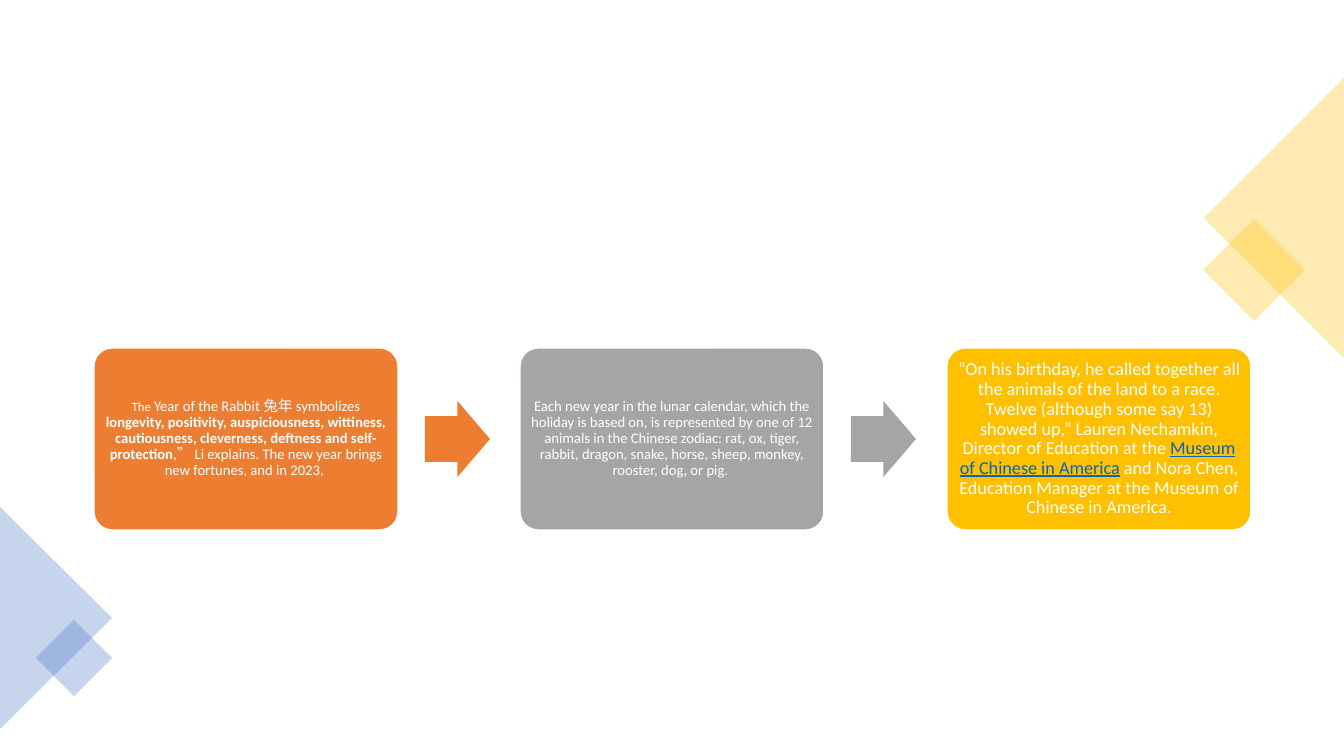
from dataclasses import dataclass

from pptx import Presentation
from pptx.dml.color import RGBColor
from pptx.enum.shapes import MSO_SHAPE
from pptx.enum.text import MSO_ANCHOR, PP_ALIGN
from pptx.oxml.ns import qn
from pptx.shapes.autoshape import Shape
from pptx.util import Emu, Pt
from lxml import etree

RECT = MSO_SHAPE.RECTANGLE
TRI = MSO_SHAPE.ISOSCELES_TRIANGLE
CARD = MSO_SHAPE.ROUNDED_RECTANGLE
ARROW = MSO_SHAPE.RIGHT_ARROW
MIDDLE = MSO_ANCHOR.MIDDLE
CENTER = PP_ALIGN.CENTER


@dataclass(frozen=True)
class Theme:
    font: str = "Calibri"
    white: str = "FFFFFF"
    orange: str = "ED7D31"
    gray: str = "A5A5A5"
    gold: str = "FFC000"
    blue: str = "4472C4"
    link: str = "0563C1"
    tiny: float = 9
    dot: float = 10
    small: float = 10.5
    large: float = 13


@dataclass(frozen=True)
class Box:
    x: int
    y: int
    w: int
    h: int


@dataclass(frozen=True)
class Decor:
    kind: MSO_SHAPE
    box: Box
    turn: int
    color: str


@dataclass(frozen=True)
class Run:
    text: str
    size: float
    color: str = Theme.white
    bold: bool = False
    under: bool = False


@dataclass(frozen=True)
class Step:
    color: str
    inset: int
    runs: tuple[Run, ...]


T = Theme()
SCALE = 914400 / 100.8  # EMU in one px
ALPHA = 30  # percent

# Corner decoration, back to front
DECOR = (
    Decor(RECT, Box(1218, 234, 72, 72), 45, T.gold),
    Decor(TRI, Box(1134, 148, 280, 140), 270, T.gold),
    Decor(TRI, Box(-55, 562, 222, 112), 90, T.blue),
    Decor(RECT, Box(47, 631, 54, 54), 45, T.blue),
)

# Story steps
STEPS = (
    Step(T.orange, 4, (
        Run("The", T.tiny),
        Run(" Year of the Rabbit 兔年 symbolizes ", T.small),
        Run("longevity, positivity, auspiciousness, wittiness, cautiousness, "
            "cleverness, deftness and self-protection", T.small, bold=True),
        Run(",” Li explains. The new year brings new fortunes, and in 2023, ",
            T.small),
    )),
    Step(T.gray, 5, (
        Run("Each new year in the lunar calendar, which the holiday is based "
            "on, is represented by one of 12 animals in the Chinese zodiac: "
            "rat, ox, tiger, rabbit, dragon, snake, horse, sheep, monkey, "
            "rooster, dog, or pig", T.small),
        Run(". ", T.dot),
    )),
    Step(T.gold, 5, (
        Run("“On his birthday, he called together all the animals of the land "
            "to a race. Twelve (although some say 13) showed up,” Lauren "
            "Nechamkin, Director of Education at the ", T.large),
        Run("Museum of Chinese in America", T.large, T.link, under=True),
        Run(" and Nora Chen, Education Manager at the Museum of Chinese in "
            "America.", T.large),
    )),
)


def px(n: int) -> Emu:
    return Emu(round(n * SCALE))


def draw(slide, kind: MSO_SHAPE, box: Box, color: str,
         adj: tuple[float, ...] = ()) -> Shape:
    """Add a filled shape with no outline or shadow."""
    shape = slide.shapes.add_shape(
        kind, px(box.x), px(box.y), px(box.w), px(box.h))
    shape.shadow.inherit = False
    shape.fill.solid()
    shape.fill.fore_color.rgb = RGBColor.from_string(color)
    shape.line.fill.background()
    for i, value in enumerate(adj):
        shape.adjustments[i] = value
    return shape


def fade(shape: Shape, share: int) -> None:
    """Make the fill see-through, share being its opacity in percent."""
    tint = shape.fill._xPr.find(qn("a:solidFill"))[0]
    etree.SubElement(tint, qn("a:alpha")).set("val", str(share * 1000))


def write(par, text: str, *, size: float, color: str,
          bold: bool, under: bool) -> None:
    run = par.add_run()
    run.text = text
    font = run.font
    font.name = T.font
    font.size = Pt(size)
    font.bold = bold
    font.underline = under
    font.color.rgb = RGBColor.from_string(color)


def card(slide, box: Box, step: Step) -> None:
    shape = draw(slide, CARD, box, step.color, (0.1,))
    shape.line.color.rgb = RGBColor.from_string(T.white)
    shape.line.width = Pt(1)
    frame = shape.text_frame
    frame.word_wrap = True
    frame.vertical_anchor = MIDDLE
    frame.margin_left = frame.margin_right = px(step.inset)
    frame.margin_top = frame.margin_bottom = px(step.inset)
    par = frame.paragraphs[0]
    par.alignment = CENTER
    par.line_spacing = 0.9
    for run in step.runs:
        write(par, run.text, size=run.size, color=run.color,
              bold=run.bold, under=run.under)


def main() -> None:
    deck = Presentation()
    deck.slide_width, deck.slide_height = px(1344), px(756)
    slide = deck.slides.add_slide(deck.slide_layouts[6])

    # Corners
    for item in DECOR:
        shape = draw(slide, item.kind, item.box, item.color)
        shape.rotation = item.turn
        fade(shape, ALPHA)

    # Cards, each but the last followed by an arrow
    for i, step in enumerate(STEPS):
        left = 94 + i * 853 // 2
        card(slide, Box(left, 348, 304, 182), step)
        if i < len(STEPS) - 1:
            draw(slide, ARROW, Box(left + 331, 401, 65, 76), step.color,
                 (0.6, 0.5))

    deck.save("out.pptx")


if __name__ == "__main__":
    main()
